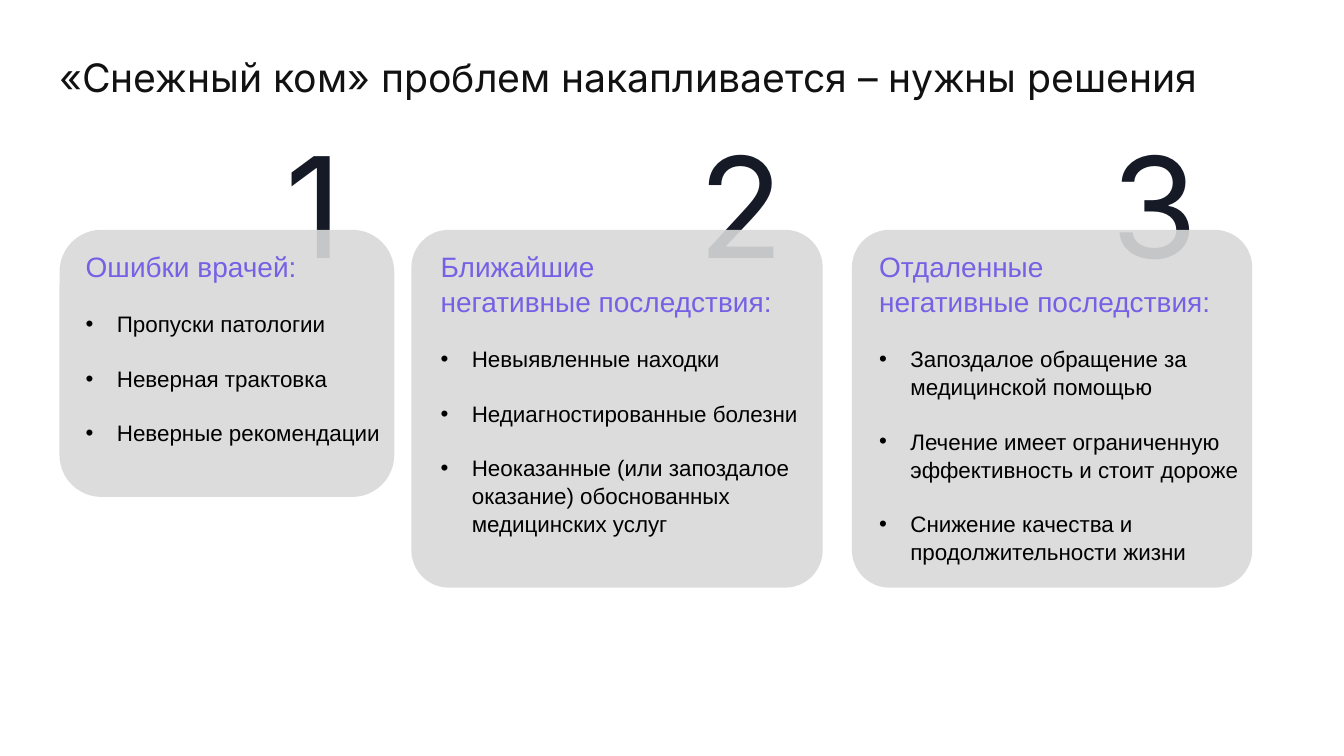
from lxml.etree import SubElement
from pptx import Presentation
from pptx.dml.color import RGBColor
from pptx.enum.shapes import MSO_SHAPE
from pptx.enum.text import MSO_ANCHOR, MSO_AUTO_SIZE, PP_ALIGN
from pptx.oxml.ns import qn
from pptx.util import Inches, Pt

INK = RGBColor(0x11, 0x11, 0x11)
NAVY = RGBColor(0x15, 0x1A, 0x26)
GREY = RGBColor(0xD9, 0xD9, 0xD9)
VIOLET = RGBColor(0x76, 0x60, 0xE5)
BLACK = RGBColor(0, 0, 0)

CARD_TOP = 2.28
NUMBER_LEFT, NUMBER_PITCH = 2.73, 4.1

STAGES = [
    dict(left=0.59, width=3.32, height=2.65, corner=0.157,
         inset=0.26, text_width=2.95, heading=["Ошибки врачей:"],
         points=["Пропуски патологии", "Неверная трактовка",
                 "Неверные рекомендации"]),
    dict(left=4.08, width=4.08, height=3.55, corner=0.105,
         inset=0.29, text_width=3.78,
         heading=["Ближайшие", "негативные последствия:"],
         points=["Невыявленные находки", "Недиагностированные болезни",
                 "Неоказанные (или запоздалое оказание) обоснованных "
                 "медицинских услуг"]),
    dict(left=8.45, width=3.97, height=3.55, corner=0.105,
         inset=0.27, text_width=3.8,
         heading=["Отдаленные", "негативные последствия:"],
         points=["Запоздалое обращение за медицинской помощью",
                 "Лечение имеет ограниченную эффективность и стоит дороже",
                 "Снижение качества и продолжительности жизни"]),
]


def style(paragraph, font_name, size, color):
    paragraph.font.name = font_name
    paragraph.font.size = Pt(size)
    paragraph.font.color.rgb = color


def clear_margins(frame):
    frame.margin_left = frame.margin_right = 0
    frame.margin_top = frame.margin_bottom = 0
    frame.word_wrap = True
    frame.vertical_anchor = MSO_ANCHOR.TOP


def add_bullet(paragraph):
    properties = paragraph._p.get_or_add_pPr()
    properties.set("marL", str(Inches(0.31)))
    properties.set("indent", str(-Inches(0.31)))
    SubElement(properties, qn("a:buFont"), typeface="Arial")
    SubElement(properties, qn("a:buChar"), char="•")


def place_title(slide, left, top, width, height):
    title = slide.shapes.title
    title.left, title.top = Inches(left), Inches(top)
    title.width, title.height = Inches(width), Inches(height)
    frame = title.text_frame
    frame.text = "«Снежный ком» проблем накапливается – нужны решения"
    frame.auto_size = MSO_AUTO_SIZE.NONE
    clear_margins(frame)
    heading = frame.paragraphs[0]
    heading.alignment = PP_ALIGN.LEFT
    heading.line_spacing = 0.9
    style(heading, "Inter", 28, INK)


def place_number(slide, number, left, top):
    box = slide.shapes.add_textbox(Inches(left), Inches(top),
                                   Inches(1.28), Inches(1.78))
    frame = box.text_frame
    frame.word_wrap = True
    frame.auto_size = MSO_AUTO_SIZE.SHAPE_TO_FIT_TEXT
    frame.text = str(number)
    style(frame.paragraphs[0], "Inter", 100, NAVY)


def place_card(slide, stage, top):
    left, height = stage["left"], stage["height"]
    card = slide.shapes.add_shape(
        MSO_SHAPE.ROUNDED_RECTANGLE, Inches(left), Inches(top),
        Inches(stage["width"]), Inches(height))
    card.adjustments[0] = stage["corner"]
    card.shadow.inherit = False
    card.line.fill.background()
    card.fill.solid()
    card.fill.fore_color.rgb = GREY
    tint = card.fill._xPr.find(".//" + qn("a:srgbClr"))
    SubElement(tint, qn("a:alpha"), val="90000")

    body = slide.shapes.add_textbox(
        Inches(left + stage["inset"]), Inches(top + 0.18),
        Inches(stage["text_width"]), Inches(height - 0.38))
    frame = body.text_frame
    clear_margins(frame)
    heading, points = stage["heading"], stage["points"]
    frame.text = "\n".join(heading + points)
    for index, paragraph in enumerate(frame.paragraphs):
        paragraph.line_spacing = 1.04
        if index < len(heading):
            style(paragraph, "Arial", 20, VIOLET)
        else:
            paragraph.space_before = Pt(19)
            add_bullet(paragraph)
            style(paragraph, "Arial", 16, BLACK)


def main():
    deck = Presentation()
    deck.slide_width, deck.slide_height = Inches(13.33), Inches(7.5)
    slide = deck.slides.add_slide(deck.slide_layouts[5])
    place_title(slide, 0.59, 0.58, 12.14, 1.27)
    for index, stage in enumerate(STAGES):
        place_number(slide, index + 1,
                     NUMBER_LEFT + index * NUMBER_PITCH, CARD_TOP - 1.15)
        place_card(slide, stage, CARD_TOP)
    deck.save("out.pptx")


if __name__ == "__main__":
    main()
